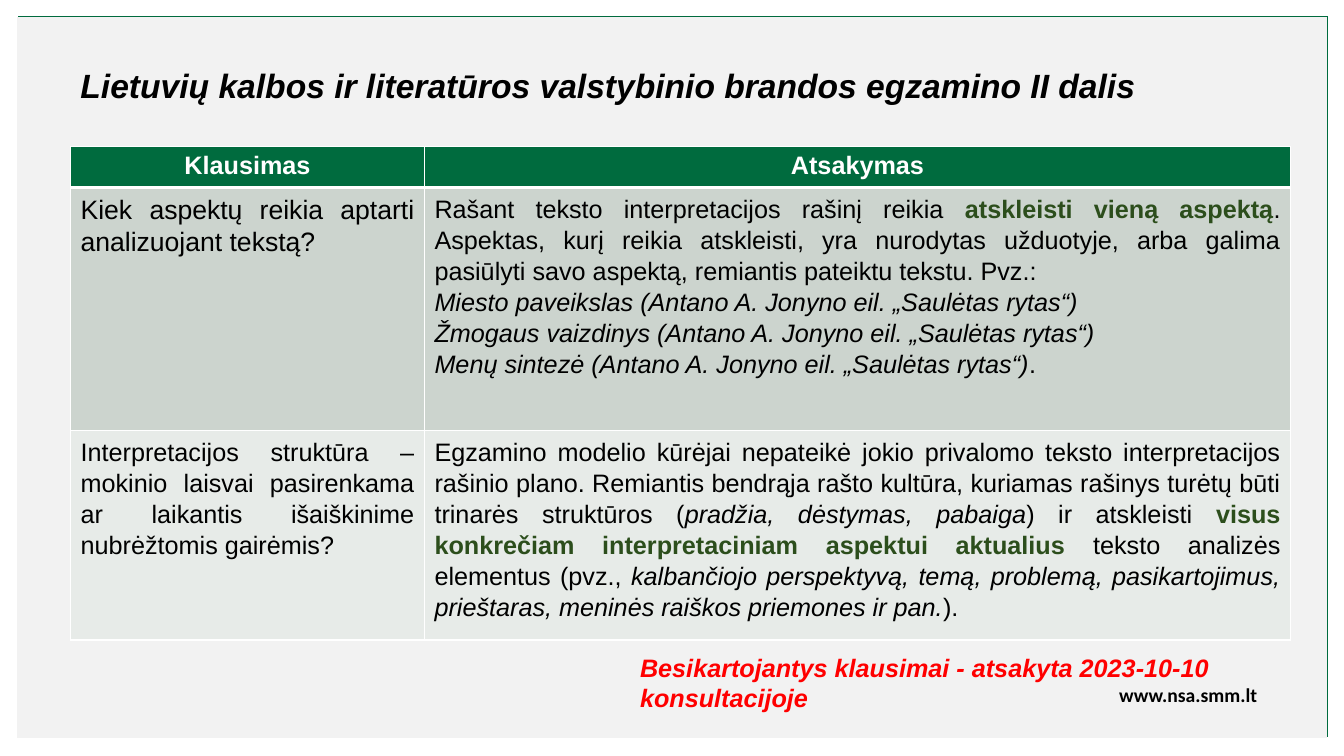
from dataclasses import dataclass

from lxml import etree
from pptx import Presentation
from pptx.dml.color import RGBColor
from pptx.enum.shapes import MSO_SHAPE
from pptx.enum.text import MSO_ANCHOR, PP_ALIGN
from pptx.oxml.ns import qn
from pptx.util import Inches, Pt

RECT = MSO_SHAPE.RECTANGLE
TOP = MSO_ANCHOR.TOP
LEFT, CENTER, RIGHT, JUSTIFY = PP_ALIGN.LEFT, PP_ALIGN.CENTER, PP_ALIGN.RIGHT, PP_ALIGN.JUSTIFY
GREEN, DARK_GREEN, GREY = "006B3E", "2C4E1C", "F2F2F2"
BLACK, WHITE, RED = "000000", "FFFFFF", "FF0000"
ROW_FILLS = [GREEN, "CCD4CE", "E7EBE8"]
COL_WIDTHS = [3.51, 8.59]
ROW_HEIGHTS = [0.41, 2.41, 2.08]


@dataclass
class Run:
    text: str
    size: float = 18
    color: str = BLACK
    bold: bool = False
    italic: bool = False
    font: str = "Arial"


@dataclass
class Label:
    x: float
    y: float
    w: float
    h: float
    run: Run
    align: PP_ALIGN = LEFT


@dataclass
class Panel:
    x: float
    y: float
    color: str


def rgb(color: str) -> RGBColor:
    return RGBColor.from_string(color)


def key(text: str) -> Run:
    return Run(text, color=DARK_GREEN, bold=True)


def it(text: str) -> Run:
    return Run(text, italic=True)


def head(text: str) -> list[list[Run]]:
    return [[Run(text, color=WHITE, bold=True)]]


def add_runs(p, runs: list[Run], align: PP_ALIGN, spacing: float = 1.0) -> None:
    p.alignment = align
    p.line_spacing = spacing
    for run in runs:
        r = p.add_run()
        r.text = run.text
        font = r.font
        font.name, font.size = run.font, Pt(run.size)
        font.bold, font.italic = run.bold, run.italic
        font.color.rgb = rgb(run.color)


def add_panel(s, panel: Panel) -> None:
    sp = s.shapes.add_shape(RECT, Inches(panel.x), Inches(panel.y), Inches(12.99), Inches(7.15))
    sp.shadow.inherit = False
    sp.fill.solid()
    sp.fill.fore_color.rgb = rgb(panel.color)
    sp.line.fill.background()


def add_label(s, label: Label) -> None:
    box = s.shapes.add_textbox(Inches(label.x), Inches(label.y), Inches(label.w), Inches(label.h))
    tf = box.text_frame
    tf.word_wrap = True
    add_runs(tf.paragraphs[0], [label.run], label.align)


def add_borders(cell, bottom: float) -> None:
    tc_pr = cell._tc.get_or_add_tcPr()
    widths = {"a:lnL": 1, "a:lnR": 1, "a:lnT": 1, "a:lnB": bottom}
    for i, (tag, width) in enumerate(widths.items()):
        ln = etree.Element(qn(tag), w=str(Pt(width)))
        fill = etree.SubElement(ln, qn("a:solidFill"))
        etree.SubElement(fill, qn("a:srgbClr"), val=WHITE)
        tc_pr.insert(i, ln)


def fill_cell(cell, paragraphs: list[list[Run]], row: int) -> None:
    cell.fill.solid()
    cell.fill.fore_color.rgb = rgb(ROW_FILLS[row])
    cell.vertical_anchor = TOP
    add_borders(cell, 3 if row == 0 else 1)
    tf = cell.text_frame
    for i, runs in enumerate(paragraphs):
        p = tf.paragraphs[0] if i == 0 else tf.add_paragraph()
        if row == 0:
            add_runs(p, runs, CENTER)
        else:
            add_runs(p, runs, JUSTIFY, 1.1)


def add_questions(s, rows: list[list[list[list[Run]]]]) -> None:
    frame = s.shapes.add_table(
        len(rows), len(COL_WIDTHS), Inches(0.7), Inches(1.45),
        Inches(sum(COL_WIDTHS)), Inches(sum(ROW_HEIGHTS)),
    )
    table = frame.table
    for col, width in zip(table.columns, COL_WIDTHS):
        col.width = Inches(width)
    for i, (row, height) in enumerate(zip(rows, ROW_HEIGHTS)):
        table.rows[i].height = Inches(height)
        for j, paragraphs in enumerate(row):
            fill_cell(table.cell(i, j), paragraphs, i)


PANELS = [Panel(0.18, 0.16, GREEN), Panel(0.17, 0.17, GREY)]

LABELS = [
    Label(9.37, 6.73, 3.2, 0.34, Run("www.nsa.smm.lt", 14, bold=True, font="Calibri"), RIGHT),
    Label(0.7, 0.59, 11.53, 0.5, Run(
        "Lietuvių kalbos ir literatūros valstybinio brandos egzamino II dalis",
        24, bold=True, italic=True)),
    Label(6.25, 6.42, 6.67, 0.71, Run(
        "Besikartojantys klausimai - atsakyta 2023-10-10 konsultacijoje",
        color=RED, bold=True, italic=True)),
]

POEM = "(Antano A. Jonyno eil. „Saulėtas rytas“)"

QUESTIONS = [
    [head("Klausimas"), head("Atsakymas")],
    [
        [[Run("Kiek aspektų reikia aptarti analizuojant tekstą?", 19)]],
        [
            [
                Run("Rašant teksto interpretacijos rašinį reikia "),
                key("atskleisti vieną aspektą"),
                Run(". Aspektas, kurį reikia atskleisti, yra nurodytas užduotyje, arba galima "
                    "pasiūlyti savo aspektą, remiantis pateiktu tekstu. Pvz.:"),
            ],
            [it(f"Miesto paveikslas {POEM}")],
            [it(f"Žmogaus vaizdinys {POEM}")],
            [it(f"Menų sintezė {POEM}"), Run(".")],
        ],
    ],
    [
        [[Run("Interpretacijos struktūra – mokinio laisvai pasirenkama ar laikantis "
              "išaiškinime nubrėžtomis gairėmis?")]],
        [[
            Run("Egzamino modelio kūrėjai nepateikė jokio privalomo teksto interpretacijos "
                "rašinio plano. Remiantis bendrąja rašto kultūra, kuriamas rašinys turėtų būti "
                "trinarės struktūros ("),
            it("pradžia, dėstymas, pabaiga"),
            Run(") ir atskleisti "),
            key("visus konkrečiam interpretaciniam aspektui aktualius "),
            Run("teksto analizės elementus (pvz., "),
            it("kalbančiojo perspektyvą, temą, problemą, pasikartojimus, prieštaras, "
               "meninės raiškos priemones ir pan."),
            Run(")."),
        ]],
    ],
]


def main() -> None:
    prs = Presentation()
    prs.slide_width, prs.slide_height = Inches(13.33), Inches(7.5)
    s = prs.slides.add_slide(prs.slide_layouts[6])
    for panel in PANELS:
        add_panel(s, panel)
    add_questions(s, QUESTIONS)
    for label in LABELS:
        add_label(s, label)
    prs.save("out.pptx")


if __name__ == "__main__":
    main()
